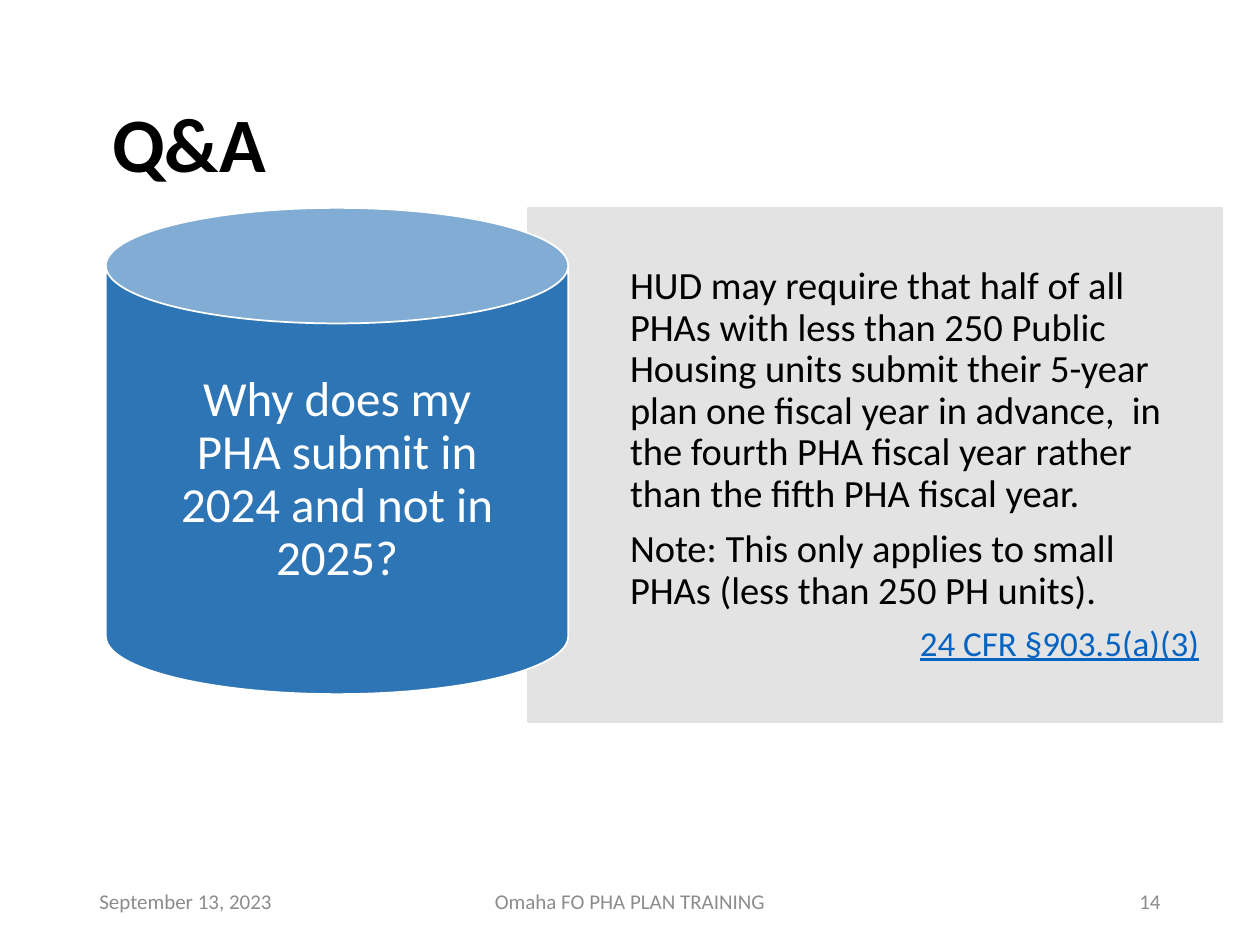
import pptx
import pptx.dml.color
import pptx.enum.shapes
import pptx.enum.text
import pptx.oxml
import pptx.oxml.ns
import pptx.util

Inches = pptx.util.Inches
Pt = pptx.util.Pt
RGBColor = pptx.dml.color.RGBColor
Align = pptx.enum.text.PP_ALIGN
Anchor = pptx.enum.text.MSO_ANCHOR
Kind = pptx.enum.shapes.MSO_SHAPE

BLACK = RGBColor(0x00, 0x00, 0x00)
WHITE = RGBColor(0xFF, 0xFF, 0xFF)
GRAY = RGBColor(0x8C, 0x8C, 0x8C)
PALE = RGBColor(0xE1, 0xE1, 0xE1)
BLUE = RGBColor(0x2E, 0x75, 0xB6)
LINK = RGBColor(0x05, 0x63, 0xC1)

RULE = "HUD may require that half of all PHAs with less than 250 Public Housing units submit their 5-year plan one fiscal year in advance,  in the fourth PHA fiscal year rather than the fifth PHA fiscal year."
NOTE = "Note: This only applies to small PHAs (less than 250 PH units)."


def write(frame, text, size, color, align=Align.LEFT, bold=False,
          under=False, line=None, after=None):
    para = frame.paragraphs[0] if not frame.text else frame.add_paragraph()
    para.alignment = align
    if line:
        para.line_spacing = line
    if after:
        para.space_after = Pt(after)
    run = para.add_run()
    run.text = text
    font = run.font
    font.name = "Calibri"
    font.size = Pt(size)
    font.bold = bold
    font.underline = under
    font.color.rgb = color


def setup(frame, left=0.1, top=0.05, right=0.1, base=0.05, anchor=Anchor.MIDDLE):
    frame.word_wrap = True
    frame.auto_size = pptx.enum.text.MSO_AUTO_SIZE.NONE
    frame.vertical_anchor = anchor
    frame.margin_left, frame.margin_right = Inches(left), Inches(right)
    frame.margin_top, frame.margin_bottom = Inches(top), Inches(base)
    return frame


def block(slide, kind, box, fill, edge):
    shape = slide.shapes.add_shape(kind, *map(Inches, box))
    shape.shadow.inherit = False
    shape.fill.solid()
    shape.fill.fore_color.rgb = fill
    shape.line.color.rgb = edge
    shape.line.width = Pt(1)
    return shape


def fade(shape, share):
    name = pptx.oxml.ns.qn("a:srgbClr")
    for color in list(shape.element.spPr.iter(name)):
        alpha = pptx.oxml.parse_xml(
            f'<a:alpha {pptx.oxml.ns.nsdecls("a")} val="{share * 1000}"/>')
        color.append(alpha)


def footer(slide, left, width, text, align):
    box = slide.shapes.add_textbox(
        Inches(left), Inches(6.95), Inches(width), Inches(0.4))
    write(setup(box.text_frame), text, 12, GRAY, align=align)


def panel(slide):
    shape = block(slide, Kind.RECTANGLE, (4.19, 1.65, 5.51, 4.08), PALE, PALE)
    fade(shape, 90)
    frame = setup(shape.text_frame, 0.81, 0.18, 0.18, 0.18)
    for text in (RULE, NOTE):
        write(frame, text, 22, BLACK, line=0.9, after=7.7)
    write(frame, "24 CFR §903.5(a)(3)", 20, LINK, align=Align.RIGHT,
          under=True, line=0.9, after=7)


def drum(slide):
    shape = block(slide, Kind.CAN, (0.84, 1.65, 3.67, 3.86), BLUE, WHITE)
    frame = setup(shape.text_frame, 0.5, 0.1, 0.5, 0.1)
    write(frame, "Why does my PHA submit in 2024 and not in 2025?", 28, WHITE,
          align=Align.CENTER, line=0.9)


def head(slide):
    title = slide.shapes.title
    title.left, title.top = Inches(0.79), Inches(0.71)
    title.width, title.height = Inches(1.8), Inches(0.84)
    frame = setup(title.text_frame, anchor=Anchor.TOP)
    write(frame, "Q&A", 44, BLACK, bold=True)


def main():
    deck = pptx.Presentation()
    deck.slide_width, deck.slide_height = Inches(10), Inches(7.5)
    slide = deck.slides.add_slide(deck.slide_layouts[5])
    head(slide)
    footer(slide, 0.69, 2.25, "September 13, 2023", Align.LEFT)
    footer(slide, 3.31, 3.38, "Omaha FO PHA PLAN TRAINING", Align.CENTER)
    footer(slide, 7.06, 2.25, "14", Align.RIGHT)
    panel(slide)
    drum(slide)
    deck.save("out.pptx")


if __name__ == "__main__":
    main()
